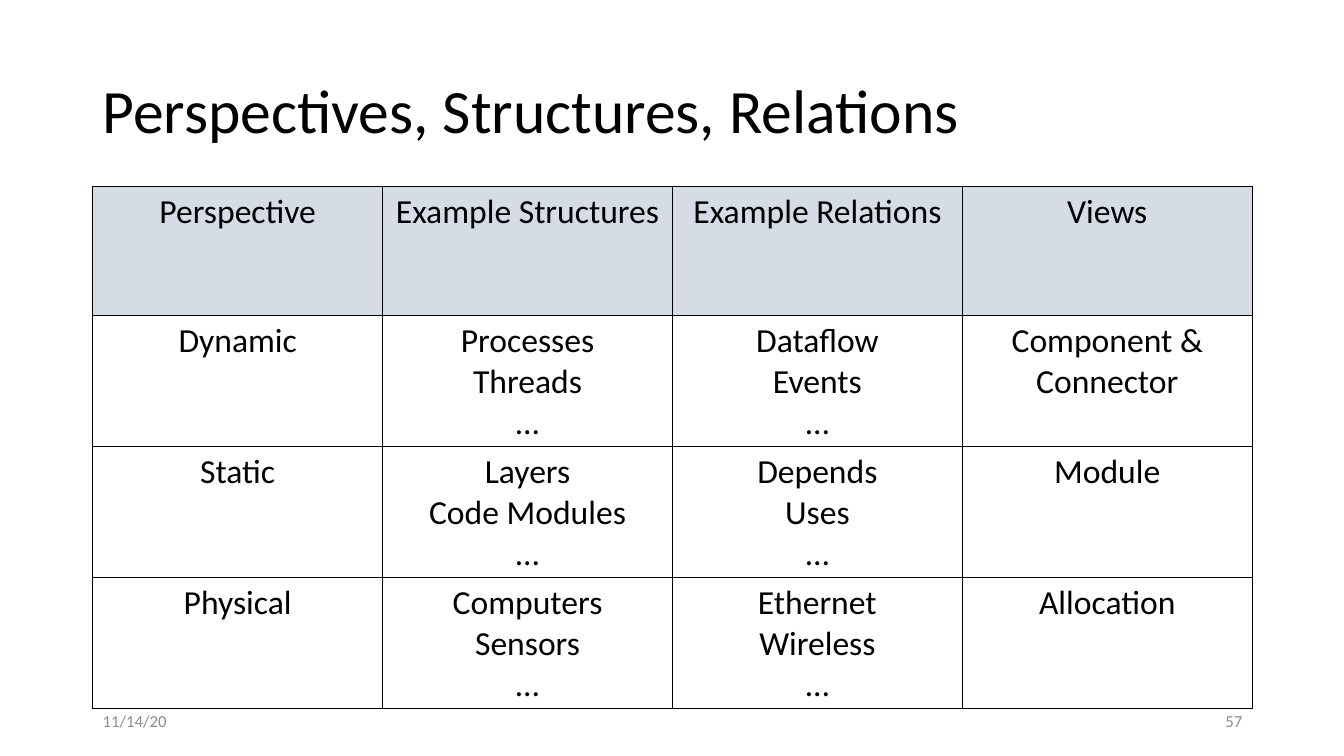
from dataclasses import dataclass

from lxml.etree import SubElement
from pptx import Presentation
from pptx.dml.color import RGBColor
from pptx.enum.text import MSO_ANCHOR as Anchor, PP_ALIGN as Align
from pptx.oxml.ns import qn
from pptx.util import Inches, Pt

FONT = "Calibri"
BLACK, GREY, HEADER_FILL = "000000", "8C8C8C", "D6DCE5"


@dataclass
class Label:
    text: str
    left: float
    top: float
    width: float
    height: float
    size: float
    color: str
    align: Align = Align.LEFT
    line_spacing: float = 1.0


LABELS = [
    Label("Perspectives, Structures, Relations", 0.92, 0.4, 11.5, 1.45, 44, BLACK,
          line_spacing=0.9),
    Label("11/14/20", 0.92, 6.95, 3, 0.4, 12, GREY),
    Label("57", 9.42, 6.95, 3, 0.4, 12, GREY, Align.RIGHT),
]

# Each cell is a list of paragraphs separated by line ends
ROWS = [
    ["Perspective", "Example Structures", "Example Relations", "Views"],
    ["Dynamic", "Processes\nThreads\n…", "Dataflow\nEvents\n…", "Component & Connector"],
    ["Static", "Layers\nCode Modules\n…", "Depends\nUses\n…", "Module"],
    ["Physical", "Computers\nSensors\n…", "Ethernet\nWireless\n…", "Allocation"],
]


def rgb(color: str) -> RGBColor:
    return RGBColor.from_string(color)


def write(tf, text: str, size: float, color: str, align: Align,
          line_spacing: float = 1.0) -> None:
    for i, line in enumerate(text.split("\n")):
        p = tf.paragraphs[0] if i == 0 else tf.add_paragraph()
        p.alignment = align
        p.line_spacing = line_spacing
        r = p.add_run()
        r.text = line
        r.font.name = FONT
        r.font.size = Pt(size)
        r.font.color.rgb = rgb(color)


def add_label(s, label: Label) -> None:
    sp = s.shapes.add_textbox(Inches(label.left), Inches(label.top),
                              Inches(label.width), Inches(label.height))
    tf = sp.text_frame
    tf.word_wrap = True
    tf.vertical_anchor = Anchor.MIDDLE
    write(tf, label.text, label.size, label.color, label.align, label.line_spacing)


def add_borders(cell, color: str, width: float) -> None:
    tc_pr = cell._tc.get_or_add_tcPr()
    for side in ("lnL", "lnR", "lnT", "lnB"):
        ln = SubElement(tc_pr, qn(f"a:{side}"), w=str(Pt(width)))
        fill = SubElement(ln, qn("a:solidFill"))
        SubElement(fill, qn("a:srgbClr"), val=color)


def add_perspectives_table(s) -> None:
    table = s.shapes.add_table(len(ROWS), len(ROWS[0]), Inches(0.92), Inches(1.85),
                               Inches(11.5), Inches(5.12)).table
    table.horz_banding = False
    table.first_row = False
    for row, texts in zip(table.rows, ROWS):
        row.height = Inches(1.28)
        for cell, text in zip(row.cells, texts):
            add_borders(cell, BLACK, 1)
            if texts is ROWS[0]:
                cell.fill.solid()
                cell.fill.fore_color.rgb = rgb(HEADER_FILL)
            else:
                cell.fill.background()
            write(cell.text_frame, text, 24, BLACK, Align.CENTER)


def main() -> None:
    prs = Presentation()
    prs.slide_width, prs.slide_height = Inches(13.33), Inches(7.5)
    s = prs.slides.add_slide(prs.slide_layouts[6])

    # Title and footer
    for label in LABELS:
        add_label(s, label)

    # Table
    add_perspectives_table(s)

    prs.save("out.pptx")


if __name__ == "__main__":
    main()
